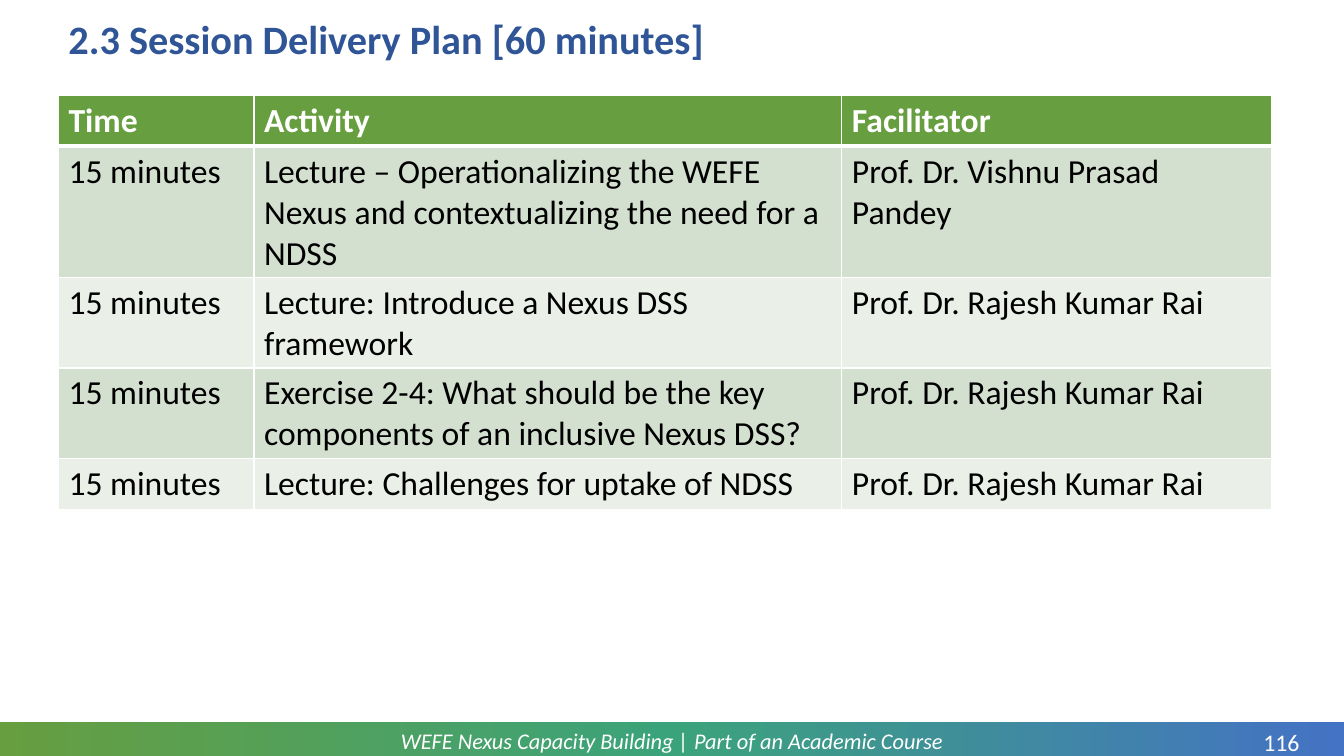
from copy import deepcopy

from lxml import etree
from pptx import Presentation
from pptx.dml.color import RGBColor
from pptx.enum.shapes import MSO_SHAPE
from pptx.enum.text import MSO_ANCHOR, PP_ALIGN
from pptx.oxml.ns import qn
from pptx.util import Inches, Pt

RECT = MSO_SHAPE.RECTANGLE
TOP, MIDDLE = MSO_ANCHOR.TOP, MSO_ANCHOR.MIDDLE
LEFT, CENTER = PP_ALIGN.LEFT, PP_ALIGN.CENTER

FONT = "Calibri"
COLORS = {
    "title": "2F5597", "header": "669E40", "band_dark": "D3DFCF",
    "band_light": "EAF0E8", "white": "FFFFFF", "black": "000000",
    "bar_left": "669E40", "bar_mid": "3BA37B", "bar_right": "4472C4",
}

TITLE = "2.3 Session Delivery Plan [60 minutes]"
FOOTER = "WEFE Nexus Capacity Building | Part of an Academic Course"
PAGE_NUMBER = "116"
PLAN = [
    ("Time", "Activity", "Facilitator"),
    ("15 minutes",
     "Lecture – Operationalizing the WEFE Nexus and contextualizing the need for a NDSS",
     "Prof. Dr. Vishnu Prasad Pandey"),
    ("15 minutes", "Lecture: Introduce a Nexus DSS framework",
     "Prof. Dr. Rajesh Kumar Rai"),
    ("15 minutes",
     "Exercise 2-4: What should be the key components of an inclusive Nexus DSS?",
     "Prof. Dr. Rajesh Kumar Rai"),
    ("15 minutes", "Lecture: Challenges for uptake of NDSS",
     "Prof. Dr. Rajesh Kumar Rai"),
]
COLUMN_WIDTHS = [1.94, 5.83, 4.26]
LINES_PER_ROW = [1, 3, 2, 2, 1]
LINE_HEIGHT, CELL_PADDING = 0.4, 0.1
BAR_STOPS = [(0, "bar_left"), (0.5, "bar_mid"), (1, "bar_right")]


def rgb(name):
    return RGBColor.from_string(COLORS[name])


def write(tf, text, size, color, bold=False, italic=False, align=LEFT,
          line_spacing=None, space_after=None):
    p = tf.paragraphs[0]
    p.alignment = align
    if line_spacing is not None:
        p.line_spacing = line_spacing
    if space_after is not None:
        p.space_after = Pt(space_after)
    r = p.add_run()
    r.text = text
    r.font.name, r.font.size = FONT, Pt(size)
    r.font.bold, r.font.italic = bold, italic
    r.font.color.rgb = rgb(color)


def add_text(slide, box, text, size, color, anchor=MIDDLE, inset=None, **fmt):
    tf = slide.shapes.add_textbox(*map(Inches, box)).text_frame
    tf.word_wrap = True
    tf.vertical_anchor = anchor
    if inset is not None:
        tf.margin_left = tf.margin_right = Inches(inset)
        tf.margin_top = tf.margin_bottom = Inches(inset)
    write(tf, text, size, color, **fmt)


def add_footer_bar(slide):
    s = slide.shapes.add_shape(RECT, *map(Inches, (0, 7.16, 13.33, 0.38)))
    s.shadow.inherit = False
    s.line.fill.background()
    s.fill.gradient()
    s.fill.gradient_angle = 0
    stops = s._element.spPr.find(qn("a:gradFill")).find(qn("a:gsLst"))
    stops.append(deepcopy(stops[0]))
    for stop, (position, color) in zip(s.fill.gradient_stops, BAR_STOPS):
        stop.position = position
        stop.color.rgb = rgb(color)


def set_borders(cell, **points):
    """Draw white borders; keys are the sides L, R, T and B in that order."""
    tc_pr = cell._tc.get_or_add_tcPr()
    for side, width in points.items():
        ln = etree.SubElement(tc_pr, qn(f"a:ln{side}"), w=str(Pt(width)))
        fill = etree.SubElement(ln, qn("a:solidFill"))
        etree.SubElement(fill, qn("a:srgbClr"), val=COLORS["white"])


def add_plan(slide):
    heights = [n * LINE_HEIGHT + CELL_PADDING for n in LINES_PER_ROW]
    box = (0.58, 0.95, sum(COLUMN_WIDTHS), sum(heights))
    table = slide.shapes.add_table(
        len(PLAN), len(COLUMN_WIDTHS), *map(Inches, box)).table
    for column, width in zip(table.columns, COLUMN_WIDTHS):
        column.width = Inches(width)
    for i, (row, height) in enumerate(zip(table.rows, heights)):
        row.height = Inches(height)
        header = i == 0
        band = "header" if header else ("band_light", "band_dark")[i % 2]
        for cell, text in zip(row.cells, PLAN[i]):
            set_borders(cell, L=1, R=1, T=3 if i == 1 else 1, B=3 if header else 1)
            cell.fill.solid()
            cell.fill.fore_color.rgb = rgb(band)
            cell.vertical_anchor = TOP
            write(cell.text_frame, text, 24, "white" if header else "black",
                  bold=header)


def main():
    prs = Presentation()
    prs.slide_width, prs.slide_height = Inches(13.33), Inches(7.5)
    slide = prs.slides.add_slide(prs.slide_layouts[6])
    add_footer_bar(slide)
    add_text(slide, (0.92, 7.17, 11.49, 0.36), FOOTER, 16, "white",
             italic=True, align=CENTER, space_after=8)
    add_text(slide, (12.41, 7.22, 0.6, 0.29), PAGE_NUMBER, 17, "white",
             anchor=TOP, inset=0, align=CENTER)
    add_text(slide, (0.58, 0.13, 12.15, 0.56), TITLE, 28.8, "title",
             bold=True, line_spacing=0.9)
    add_plan(slide)
    prs.save("out.pptx")


if __name__ == "__main__":
    main()
